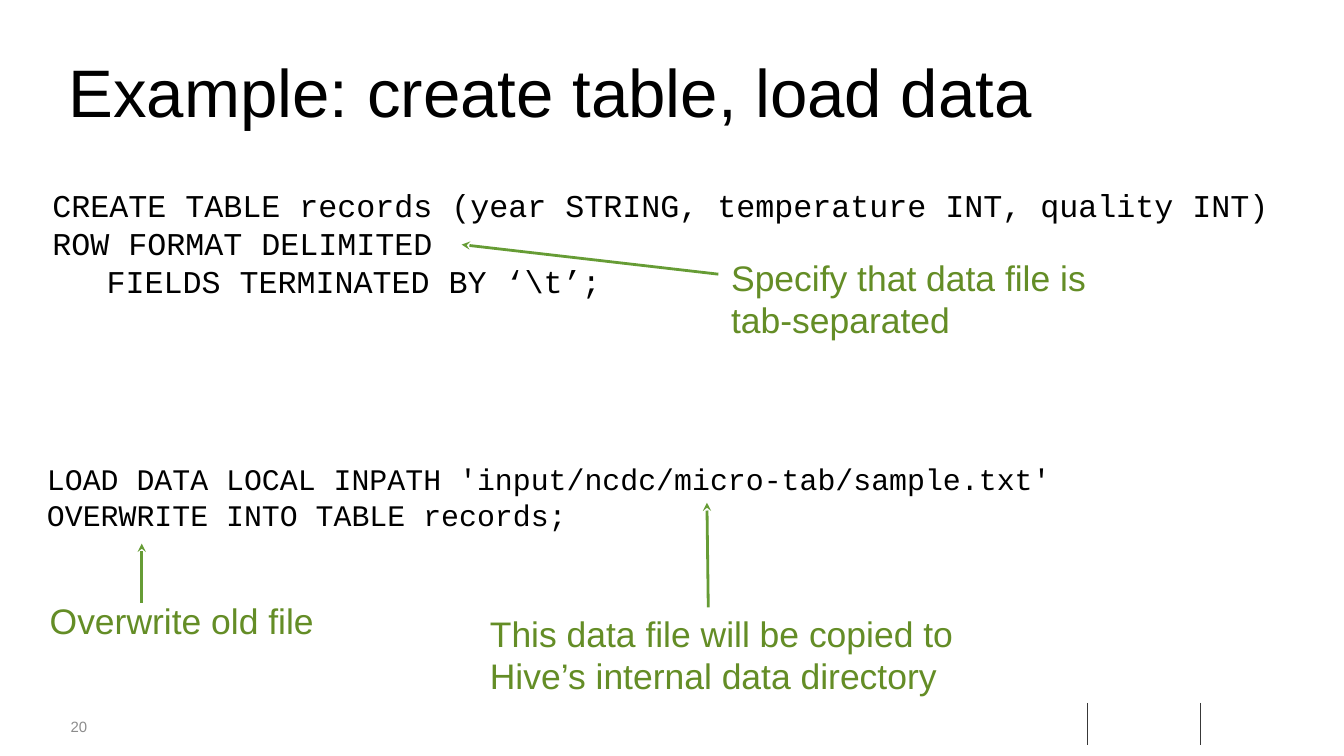
from lxml import etree
from pptx import Presentation
from pptx import util as u
from pptx.dml.color import RGBColor
from pptx.enum import shapes, text
from pptx.oxml.ns import qn

COLORS = {"black": "000000", "note": "648D26", "arrow": "669C35",
          "rule": "383838", "number": "8C8C8C"}


def rgb(name):
    return RGBColor.from_string(COLORS[name])


def set_frame(tf, inset=None, **formats):
    """Apply frame settings; inset is one margin for all four sides."""
    tf.word_wrap = True
    tf.auto_size = text.MSO_AUTO_SIZE.NONE
    if inset is not None:
        for side in ("left", "top", "right", "bottom"):
            formats[f"margin_{side}"] = u.Inches(inset)
    for key, value in formats.items():
        setattr(tf, key, value)


def set_font(p, size, color, name="Arial"):
    for key, value in {"size": u.Pt(size), "name": name}.items():
        setattr(p.font, key, value)
    p.font.color.rgb = rgb(color)


def add_title(s, title):
    sp = s.shapes.title
    box = {"left": 0.98, "top": 0.61, "width": 17.48, "height": 1.63}
    for key, value in box.items():
        setattr(sp, key, u.Inches(value))
    tf = sp.text_frame
    set_frame(tf, 0.04, vertical_anchor=text.MSO_ANCHOR.MIDDLE)
    tf.text = title
    p = tf.paragraphs[0]
    p.alignment = text.PP_ALIGN.LEFT
    p.line_spacing = 0.9
    set_font(p, 72, "black")


def add_text(s, box, lines, size, color, name="Arial", tab=None, **frame):
    tf = s.shapes.add_textbox(*map(u.Inches, box)).text_frame
    set_frame(tf, **frame)
    for i, line in enumerate(lines):
        p = tf.add_paragraph() if i else tf.paragraphs[0]
        p.text = line
        if tab:
            tabs = etree.SubElement(p._p.get_or_add_pPr(), qn("a:tabLst"))
            etree.SubElement(tabs, qn("a:tab"), pos=str(u.Inches(tab)), algn="l")
        set_font(p, size, color, name)


def add_code(s, box, lines, size):
    add_text(s, box, lines, size, "black", "Courier New", tab=0.81)


def add_note(s, box, note):
    add_text(s, box, [note], 38, "note", inset=0.06,
             vertical_anchor=text.MSO_ANCHOR.MIDDLE)


def add_line(s, start, end, color, width, head=False):
    """Draw a line, with an arrowhead at its start if head is set."""
    c = s.shapes.add_connector(shapes.MSO_CONNECTOR.STRAIGHT,
                               *map(u.Inches, (*start, *end)))
    c.line.color.rgb = rgb(color)
    c.line.width = u.Pt(width)
    if head:
        etree.SubElement(c.line._get_or_add_ln(), qn("a:headEnd"), type="stealth")
    etree.SubElement(c._element.spPr, qn("a:effectLst"))


def main():
    prs = Presentation()
    prs.slide_width, prs.slide_height = u.Inches(20), u.Inches(11.25)
    s = prs.slides.add_slide(prs.slide_layouts[5])

    # Footer rules and page number
    for x in (16.18, 17.86):
        add_line(s, (x, 10.46), (x, 11.09), "rule", 1)
    add_text(s, (1.05, 10.68, 0.59, 0.27), ["20"], 16, "number", inset=0,
             vertical_anchor=text.MSO_ANCHOR.MIDDLE)

    add_title(s, "Example: create table, load data")

    # SQL statements
    add_code(s, (0.68, 2.71, 18.89, 1.82), [
        "CREATE TABLE records (year STRING, temperature INT, quality INT)",
        "ROW FORMAT DELIMITED",
        "\tFIELDS TERMINATED BY ‘\\t’;"], 34)
    add_code(s, (0.6, 6.81, 16.13, 1.18), [
        "LOAD DATA LOCAL INPATH 'input/ncdc/micro-tab/sample.txt'",
        "OVERWRITE INTO TABLE records;"], 32)

    # Notes, each with an arrow to the code
    notes = [
        ("Specify that data file is tab-separated",
         (10.82, 3.74, 6.33, 1.4), (6.87, 3.64), (10.69, 4.08)),
        ("This data file will be copied to Hive’s internal data directory",
         (7.23, 9.04, 7.69, 1.4), (10.52, 7.48), (10.54, 9.04)),
        ("Overwrite old file",
         (0.68, 8.85, 4.64, 0.76), (2.11, 8.09), (2.11, 8.97)),
    ]
    for note, box, tip, tail in notes:
        add_line(s, tip, tail, "arrow", 3, head=True)
        add_note(s, box, note)

    prs.save("out.pptx")


if __name__ == "__main__":
    main()
